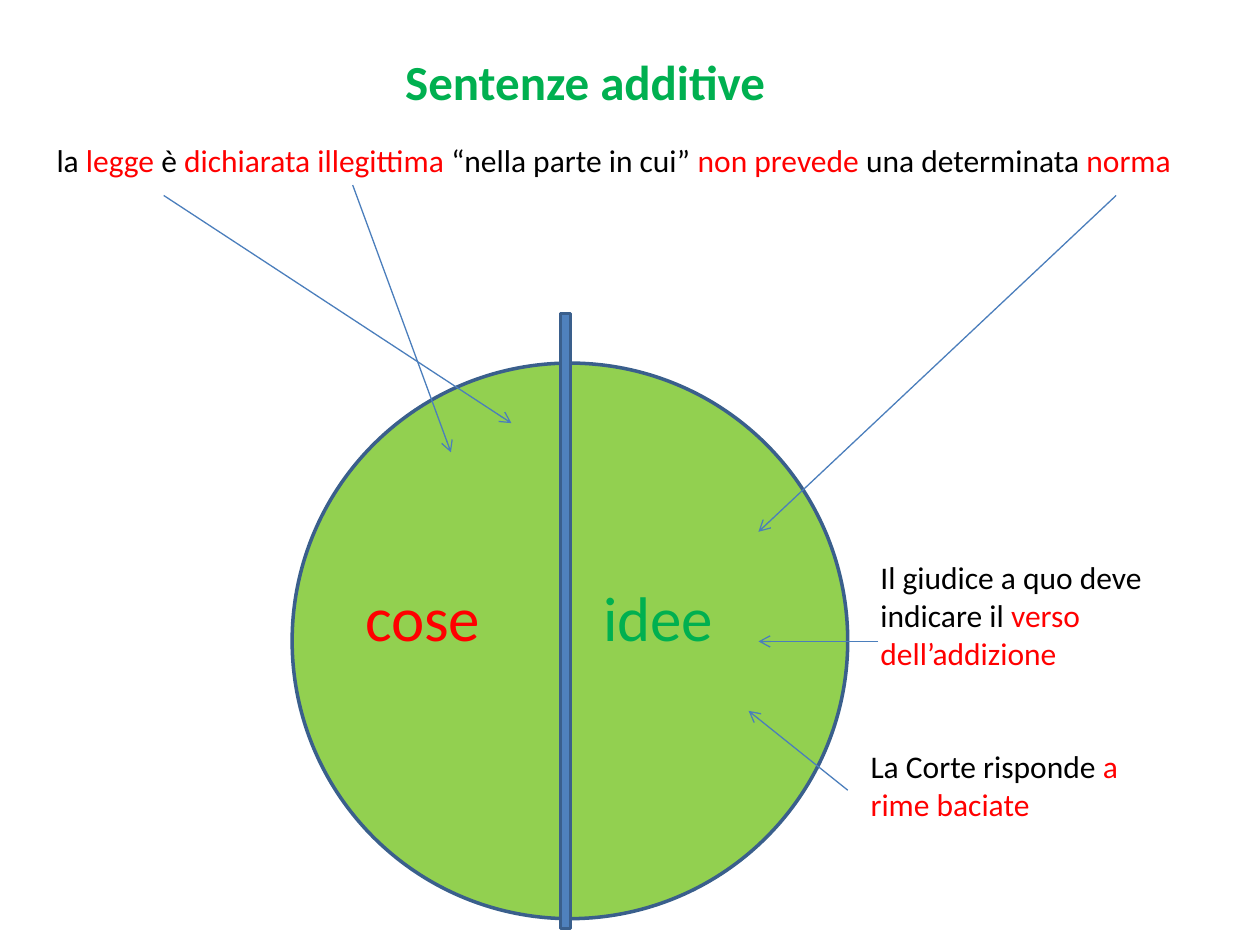
"""Build the slide on additive rulings, with a circle split into things and ideas."""
from lxml import etree
from pptx import Presentation
from pptx.dml.color import RGBColor
from pptx.enum.shapes import MSO_CONNECTOR, MSO_SHAPE
from pptx.enum.text import MSO_AUTO_SIZE, PP_ALIGN
from pptx.oxml.ns import qn
from pptx.util import Cm, Pt

OVAL, RECT = MSO_SHAPE.OVAL, MSO_SHAPE.RECTANGLE
LINE = MSO_CONNECTOR.STRAIGHT
LEFT, CENTER = PP_ALIGN.LEFT, PP_ALIGN.CENTER
FIT = MSO_AUTO_SIZE.SHAPE_TO_FIT_TEXT
BLACK, RED, GREEN = "000000", "FF0000", "00B050"
LIME, BLUE, EDGE, ARROW = "92D050", "4F81BD", "3A5F8C", "4B7EBC"


def paint(part, tone):
    part.rgb = RGBColor.from_string(tone)


def write(slide, area, size, parts, align=LEFT, bold=False):
    frame = slide.shapes.add_textbox(*map(Cm, area)).text_frame
    frame.word_wrap = True
    frame.auto_size = FIT
    para = frame.paragraphs[0]
    para.alignment = align
    for text, tone in parts:
        run = para.add_run()
        run.text = text
        run.font.name = "Calibri"
        run.font.size = Pt(size)
        run.font.bold = bold
        paint(run.font.color, tone)


deck = Presentation()
deck.slide_width, deck.slide_height = Cm(25.4), Cm(19.05)
slide = deck.slides.add_slide(deck.slide_layouts[6])

for kind, area, tone in [
    (OVAL, (5.89, 7.32, 11.2, 11.2), LIME),
    (RECT, (11.3, 6.32, 0.2, 12.4), BLUE),
]:
    shape = slide.shapes.add_shape(kind, *map(Cm, area))
    shape.shadow.inherit = False
    shape.fill.solid()
    paint(shape.fill.fore_color, tone)
    paint(shape.line.color, EDGE)
    shape.line.width = Pt(2)

write(slide, (2.69, 0.91, 18.21, 1.45), 28, [("Sentenze additive", GREEN)], CENTER, True)
write(slide, (0.89, 2.72, 23.19, 1.02), 18, [
    ("la ", BLACK),
    ("legge", RED),
    (" è ", BLACK),
    ("dichiarata illegittima ", RED),
    ("“nella parte in cui” ", BLACK),
    ("non prevede ", RED),
    ("una determinata ", BLACK),
    ("norma", RED),
])
write(slide, (7.11, 11.53, 3.61, 1.8), 36, [("cose", RED)])
write(slide, (11.91, 11.53, 4.19, 1.8), 36, [("idee", GREEN)])
write(slide, (17.5, 11.13, 6.81, 2.57), 18, [
    ("Il giudice a quo deve indicare il ", BLACK),
    ("verso dell’addizione", RED),
])
write(slide, (17.3, 14.94, 6.6, 1.8), 18, [
    ("La Corte risponde ", BLACK),
    ("a rime baciate", RED),
])

for ends in [
    (22.5, 3.94, 15.29, 10.72),
    (7.11, 3.73, 9.09, 9.12),
    (3.3, 3.94, 10.31, 8.53),
    (17.7, 12.93, 15.29, 12.93),
    (17.09, 15.93, 15.09, 14.33),
]:
    link = slide.shapes.add_connector(LINE, *map(Cm, ends))
    paint(link.line.color, ARROW)
    link.line.width = Pt(0.75)
    props = link.element.spPr
    etree.SubElement(props.find(qn("a:ln")), qn("a:tailEnd"), type="arrow")
    etree.SubElement(props, qn("a:effectLst"))

deck.save("out.pptx")
